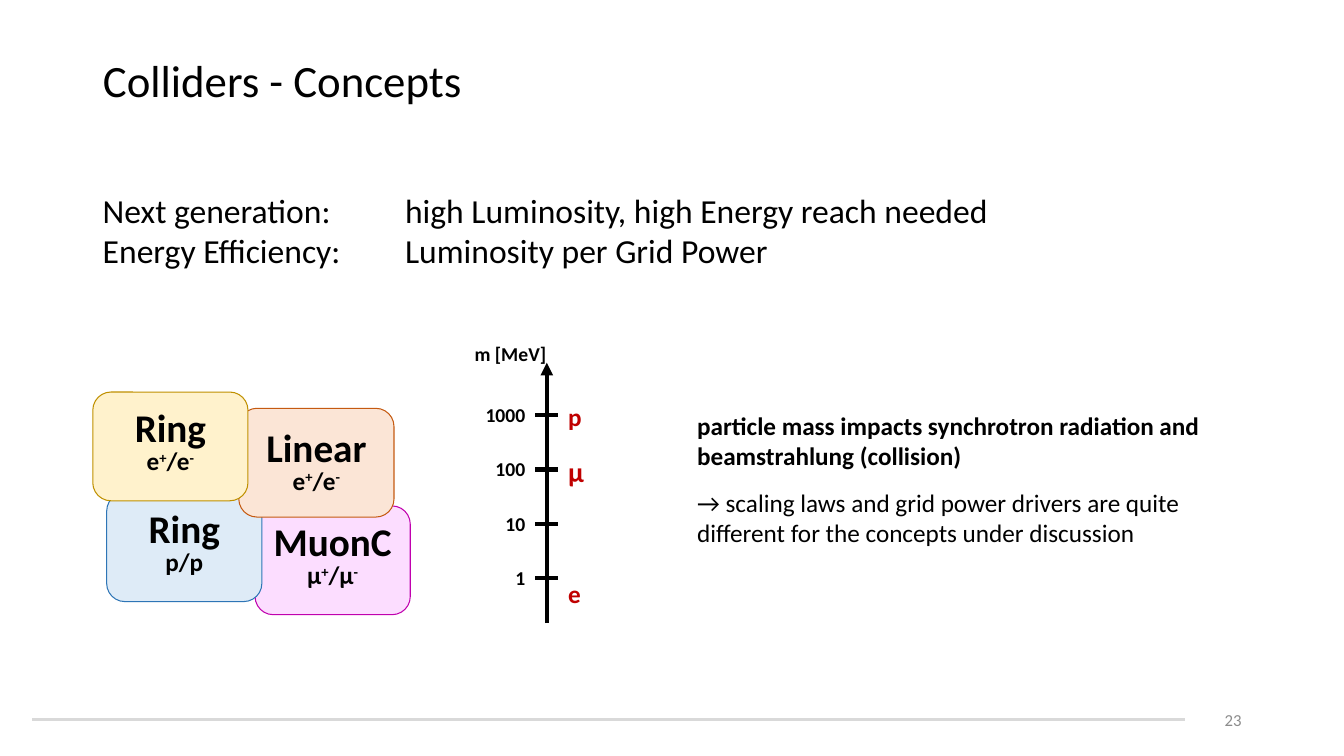
from dataclasses import dataclass
from itertools import groupby

from pptx import Presentation
from pptx import util as u
from pptx.dml.color import RGBColor
from pptx.enum import shapes as kinds, text as t
from pptx.oxml.ns import qn
from lxml import etree


@dataclass(frozen=True)
class Theme:
    font: str = "Calibri"
    ink: str = "000000"
    accent: str = "C00000"
    page: str = "8C8C8C"
    rule: str = "D9D9D9"
    yellow: tuple = ("FFF2CC", "BF9000")
    orange: tuple = ("FBE5D6", "C55A11")
    blue: tuple = ("DEEBF7", "2E75B6")
    pink: tuple = ("FCDDFF", "C000AE")
    title: int = 32
    card: int = 28
    lead: int = 24
    symbol: int = 20
    body: int = 18
    axis: int = 14
    small: int = 12


THEME = Theme()


def set_format(target, values):
    for name, value in values.items():
        setattr(target, name, value)


def add_run(paragraph, text, size, color=THEME.ink, bold=False):
    run = paragraph.add_run()
    run.text = text
    set_format(run.font, {"name": THEME.font, "size": u.Pt(size), "bold": bold})
    run.font.color.rgb = RGBColor.from_string(color)
    return run


def add_text(shapes, box, lines, size, color=THEME.ink, bold=False,
             align=t.PP_ALIGN.LEFT, anchor=t.MSO_ANCHOR.TOP):
    shape = shapes.add_textbox(*map(u.Cm, box))
    frame = shape.text_frame
    set_format(frame, {"word_wrap": True, "vertical_anchor": anchor})
    for index, line in enumerate(lines):
        paragraph = frame.add_paragraph() if index else frame.paragraphs[0]
        paragraph.alignment = align
        add_run(paragraph, line, size, color, bold)
    return frame


def add_line(shapes, start, end, color, width, arrow=False):
    line = shapes.add_connector(kinds.MSO_CONNECTOR.STRAIGHT, *map(u.Cm, start + end))
    line.line.color.rgb = RGBColor.from_string(color)
    line.line.width = u.Pt(width)
    properties = line._element.spPr
    if arrow:
        etree.SubElement(properties.find(qn("a:ln")), qn("a:tailEnd"), type="triangle")
    etree.SubElement(properties, qn("a:effectLst"))


def add_title(slide, text):
    title = slide.shapes.title
    set_format(title, {"left": u.Cm(2.34), "top": u.Cm(1.02),
                       "width": u.Cm(29.21), "height": u.Cm(2.16)})
    title.text_frame.vertical_anchor = t.MSO_ANCHOR.MIDDLE
    paragraph = title.text_frame.paragraphs[0]
    set_format(paragraph, {"alignment": t.PP_ALIGN.LEFT, "line_spacing": 0.9})
    add_run(paragraph, text, THEME.title)


def add_goals(slide):
    goals = ["Next generation: \thigh Luminosity, high Energy reach needed",
             "Energy Efficiency: \tLuminosity per Grid Power"]
    frame = add_text(slide.shapes, (2.34, 4.65, 26.67, 2.31), goals, THEME.lead)
    for paragraph in frame.paragraphs:
        tabs = etree.SubElement(paragraph._p.get_or_add_pPr(), qn("a:tabLst"))
        etree.SubElement(tabs, qn("a:tab"), pos=str(u.Cm(7.62)), algn="l")


def add_card(slide, left, top, name, beams, colors, inset=0.41, anchor=t.MSO_ANCHOR.MIDDLE):
    """Draw one collider concept; the charge signs in beams are raised."""
    fill, outline = colors
    card = slide.shapes.add_shape(kinds.MSO_SHAPE.ROUNDED_RECTANGLE,
                                  *map(u.Cm, (left, top, 3.91, 2.74)))
    card.shadow.inherit = False
    card.fill.solid()
    card.fill.fore_color.rgb = RGBColor.from_string(fill)
    card.line.color.rgb = RGBColor.from_string(outline)
    card.line.width = u.Pt(0.75)
    frame = card.text_frame
    set_format(frame, {"word_wrap": True, "vertical_anchor": anchor,
                       "margin_left": u.Cm(0.25), "margin_right": u.Cm(0.25),
                       "margin_top": u.Cm(inset), "margin_bottom": u.Cm(0.2)})
    heading, detail = frame.paragraphs[0], frame.add_paragraph()
    for paragraph in (heading, detail):
        set_format(paragraph, {"alignment": t.PP_ALIGN.CENTER, "line_spacing": u.Pt(18)})
    add_run(heading, name, THEME.card, bold=True)
    for raised, letters in groupby(beams, key=lambda letter: letter in "+-"):
        run = add_run(detail, "".join(letters), THEME.body, bold=True)
        if raised:
            run._r.get_or_add_rPr().set("baseline", "30000")


def add_mass_axis(slide):
    shapes = slide.shapes.add_group_shape().shapes
    right = t.PP_ALIGN.RIGHT
    add_line(shapes, (13.78, 15.7), (13.78, 9.14), THEME.ink, 3, arrow=True)
    for index, mass in enumerate(["1000", "100", "10", "1"]):
        y = 10.46 + 1.37 * index
        add_line(shapes, (13.49, y), (14.07, y), THEME.ink, 3)
        add_text(shapes, (11.76, y - 0.43, 1.73, 0.86), [mass], THEME.axis,
                 bold=True, align=right)
    add_text(shapes, (11.61, 8.48, 2.41, 0.86), ["m [MeV]"], THEME.axis,
             bold=True, align=right)
    for particle, top, size in [("p", 9.98, THEME.body), ("μ", 11.33, THEME.symbol),
                                ("e", 14.45, THEME.body)]:
        add_text(shapes, (14.07, top, 1.17, 1.02), [particle], size, THEME.accent, bold=True)


def add_conclusion(slide):
    frame = add_text(
        slide.shapes, (17.32, 10.21, 13.41, 3.76),
        ["particle mass impacts synchrotron radiation and beamstrahlung (collision)",
         "→ scaling laws and grid power drivers are quite different for the concepts "
         "under discussion"], THEME.body)
    statement, consequence = frame.paragraphs
    statement.runs[0].font.bold = True
    consequence.space_before = u.Pt(12)


def add_footer(slide):
    add_line(slide.shapes, (0.81, 18.14), (29.87, 18.14), THEME.rule, 2.25)
    add_text(slide.shapes, (29.69, 17.63, 1.85, 1.02), ["23"], THEME.small, THEME.page,
             align=t.PP_ALIGN.RIGHT, anchor=t.MSO_ANCHOR.MIDDLE)


def main():
    presentation = Presentation()
    presentation.slide_width = u.Cm(33.87)
    presentation.slide_height = u.Cm(19.05)
    slide = presentation.slides.add_slide(presentation.slide_layouts.get_by_name("Title Only"))
    add_footer(slide)
    add_title(slide, "Colliders - Concepts")
    add_goals(slide)
    add_card(slide, 6.43, 12.75, "MuonC", "μ+/μ-", THEME.pink)
    add_mass_axis(slide)
    add_card(slide, 2.69, 12.42, "Ring", "p/p", THEME.blue)
    add_card(slide, 6.02, 10.29, "Linear", "e+/e-", THEME.orange, 0.79, t.MSO_ANCHOR.TOP)
    add_card(slide, 2.34, 9.88, "Ring", "e+/e-", THEME.yellow)
    add_conclusion(slide)
    presentation.save("out.pptx")


if __name__ == "__main__":
    main()
